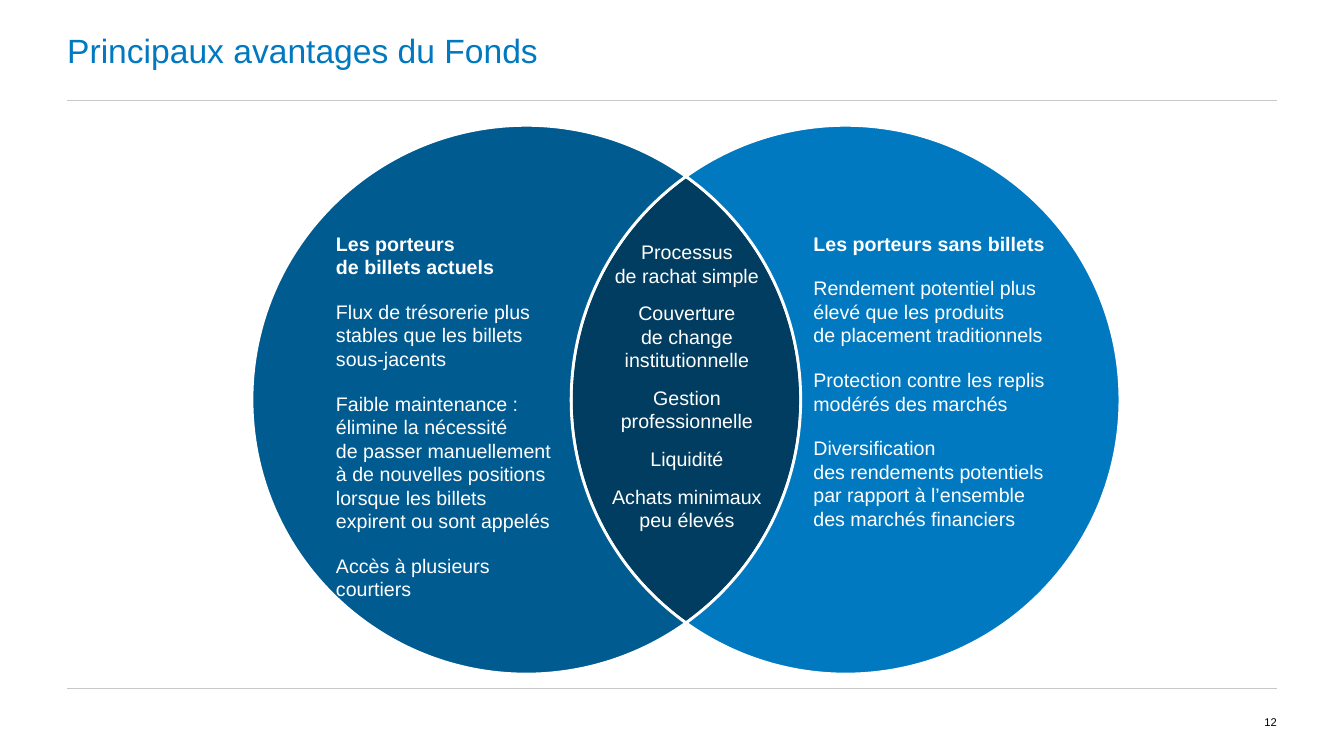
import math

from lxml import etree
from pptx import Presentation
from pptx.dml.color import RGBColor
from pptx.enum import shapes, text
from pptx.oxml import ns
from pptx.util import Pt

COLORS = {
    "title": "0079C1",
    "rule": "C8C8C8",
    "left": "005B91",
    "right": "0079C1",
    "overlap": "003D60",
    "white": "FFFFFF",
    "black": "000000",
}
LEFT_X, RIGHT_X, CENTER_Y, RADIUS = 376, 604, 285.5, 196
CROSSING = math.degrees(math.acos((RIGHT_X - LEFT_X) / 2 / RADIUS))
NO_BREAK_SPACE = chr(160)


def add_text(slide, box, paragraphs, size=14, color="white", bold_first=False,
             align=text.PP_ALIGN.LEFT, anchor=text.MSO_ANCHOR.TOP,
             space_after=0, bottom_inset=0):
    """Add a text box; a tilde in the wording stands for a no-break space."""
    frame = slide.shapes.add_textbox(*[Pt(length) for length in box]).text_frame
    frame.word_wrap = True
    frame.vertical_anchor = anchor
    frame.margin_left = frame.margin_top = frame.margin_right = 0
    frame.margin_bottom = Pt(bottom_inset)
    for index, wording in enumerate(paragraphs):
        paragraph = frame.paragraphs[0] if index == 0 else frame.add_paragraph()
        paragraph.alignment = align
        paragraph.space_after = Pt(space_after)
        run = paragraph.add_run()
        run.text = wording.replace("~", NO_BREAK_SPACE)
        run.font.name = "Arial"
        run.font.size = Pt(size)
        run.font.bold = bold_first and index == 0
        run.font.color.rgb = RGBColor.from_string(COLORS[color])


def arc(center_x, *degrees):
    """Return Bézier points of a circle arc: a start, then three for each piece."""
    angles = [math.radians(degree) for degree in degrees]
    polar = [(1, 0, angles[0])]
    for start, end in zip(angles, angles[1:]):
        pull = 4 / 3 * math.tan((end - start) / 4)
        polar += [(1, pull, start), (1, -pull, end), (1, 0, end)]
    return [(Pt(center_x + RADIUS * (r * math.cos(a) - t * math.sin(a))),
             Pt(CENTER_Y + RADIUS * (r * math.sin(a) + t * math.cos(a))))
            for r, t, a in polar]


presentation = Presentation()
presentation.slide_width, presentation.slide_height = Pt(960), Pt(540)
slide = presentation.slides.add_slide(presentation.slide_layouts[6])

for y in (72, 492):
    rule = slide.shapes.add_connector(
        shapes.MSO_CONNECTOR.STRAIGHT, Pt(48), Pt(y), Pt(912), Pt(y))
    rule.line.color.rgb = RGBColor.from_string(COLORS["rule"])
    rule.line.width = Pt(0.75)
    etree.SubElement(rule._element.spPr, ns.qn("a:effectLst"))

add_text(slide, (48, 0, 912, 72), ["Principaux avantages du Fonds"], size=24,
         color="title", anchor=text.MSO_ANCHOR.MIDDLE)

overlap_left = arc(RIGHT_X, 180 - CROSSING, 180, 180 + CROSSING)
overlap_right = arc(LEFT_X, -CROSSING, 0, CROSSING)
outer_left = arc(LEFT_X, CROSSING, 90, 180, 270, 360 - CROSSING)
outer_right = arc(RIGHT_X, CROSSING - 180, -90, 0, 90, 180 - CROSSING)
regions = {
    "overlap": overlap_right + overlap_left[1:],
    "left": outer_left + overlap_left[-2::-1],
    "right": outer_right + overlap_right[-2::-1],
}
for name, points in regions.items():
    builder = slide.shapes.build_freeform(*points[0], scale=1)
    builder.add_line_segments(points[1:], close=True)
    region = builder.convert_to_shape()
    # Each three straight segments become one cubic curve.
    segments = list(region._element.iter(ns.qn("a:lnTo")))
    for first, second, third in zip(segments[::3], segments[1::3], segments[2::3]):
        curve = etree.Element(ns.qn("a:cubicBezTo"))
        first.addprevious(curve)
        for segment in (first, second, third):
            curve.append(segment[0])
            segment.getparent().remove(segment)
    region.shadow.inherit = False
    region.fill.solid()
    region.fill.fore_color.rgb = RGBColor.from_string(COLORS[name])
    region.line.color.rgb = RGBColor.from_string(COLORS["white"])
    region.line.width = Pt(2)

add_text(slide, (864, 492, 48, 48), ["12"], size=8, color="black",
         align=text.PP_ALIGN.RIGHT, anchor=text.MSO_ANCHOR.MIDDLE)

add_text(slide, (240, 165.6, 161.3, 316), [
    "Les porteurs de~billets~actuels",
    "Flux de~trésorerie plus stables que les~billets sous-jacents",
    "Faible maintenance~: élimine la~nécessité de~passer manuellement "
    "à de~nouvelles positions lorsque les~billets expirent ou sont appelés",
    "Accès à plusieurs courtiers",
], bold_first=True, space_after=15)

add_text(slide, (581, 165.6, 181.4, 316), [
    "Les porteurs sans billets",
    "Rendement potentiel plus élevé que les~produits de~placement traditionnels",
    "Protection contre les~replis modérés des~marchés",
    "Diversification des~rendements potentiels par rapport à l’ensemble "
    "des~marchés financiers",
], bold_first=True, space_after=15)

add_text(slide, (427, 165.6, 127.4, 247), [
    "Processus de~rachat~simple",
    "Couverture de~change institutionnelle",
    "Gestion professionnelle",
    "Liquidité",
    "Achats minimaux peu~élevés",
], align=text.PP_ALIGN.CENTER, anchor=text.MSO_ANCHOR.MIDDLE,
    space_after=10, bottom_inset=27)

presentation.save("out.pptx")
